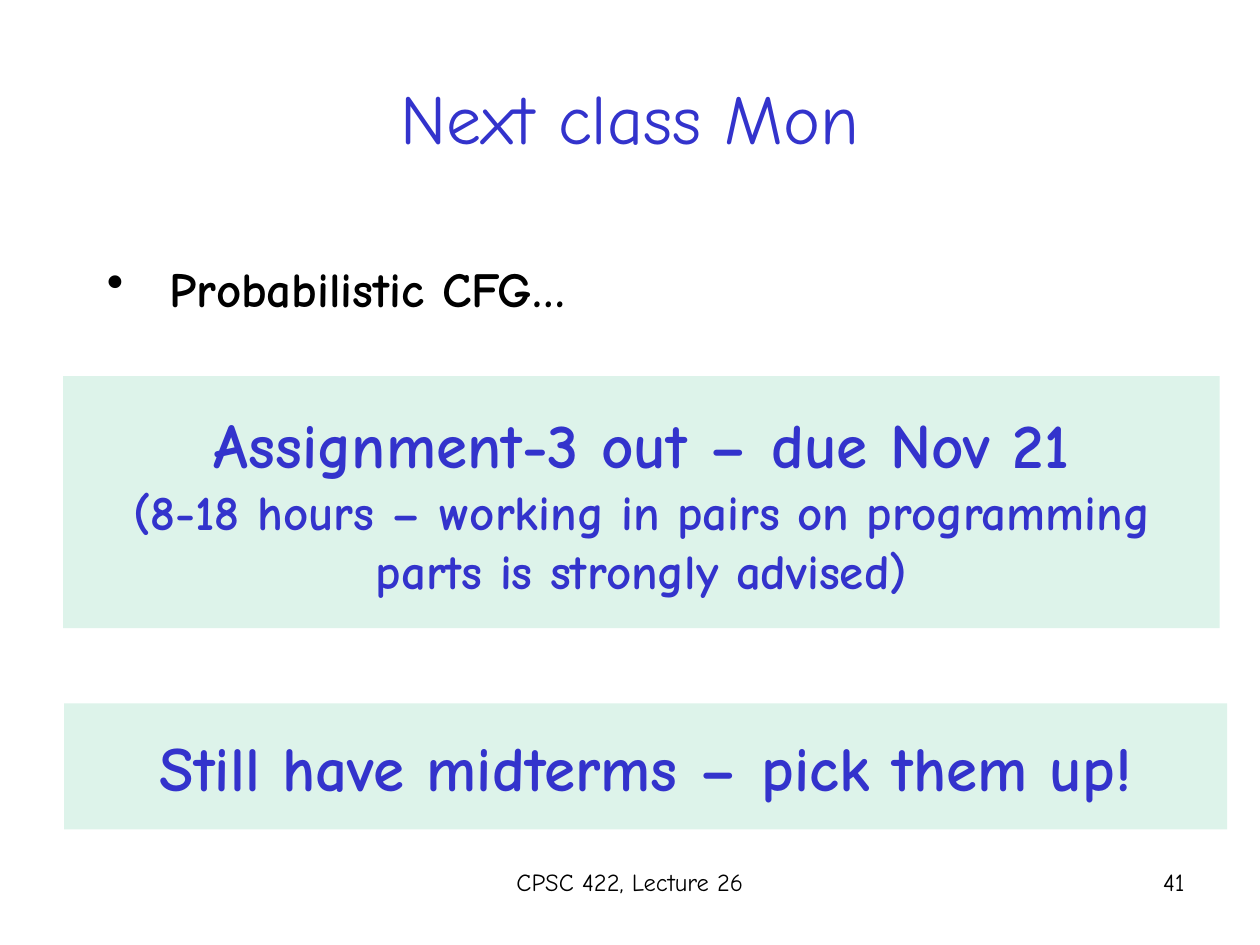
from lxml import etree
from pptx import Presentation
from pptx.dml.color import RGBColor
from pptx.enum import shapes, text
from pptx.oxml import ns
from pptx.util import Pt

FACE = "Comic Neue"
BLUE = RGBColor(0x33, 0x33, 0xCC)
BLACK = RGBColor(0, 0, 0)
MINT = RGBColor(0xDD, 0xF3, 0xEA)
MID = text.PP_ALIGN.CENTER
RIGHT = text.PP_ALIGN.RIGHT
TOP = text.MSO_ANCHOR.TOP
CORE = text.MSO_ANCHOR.MIDDLE


def write(shape, lines, color, bold=False, align=None, anchor=TOP):
    frame = shape.text_frame
    frame.word_wrap = True
    frame.vertical_anchor = anchor
    frame.text = "\n".join(line for line, size in lines)
    for para, (line, size) in zip(frame.paragraphs, lines):
        para.alignment = align
        font = para.font
        font.name = FACE
        font.size = Pt(size)
        font.bold = bold
        font.color.rgb = color
    return frame


def add_text(slide, box, *args, **style):
    shape = slide.shapes.add_textbox(*map(Pt, box))
    return write(shape, *args, **style)


def add_title(slide, box):
    add_text(slide, box, [("Next class Mon", 40)], BLUE, align=MID, anchor=CORE)


def add_topic(slide, box):
    frame = add_text(slide, box, [("Probabilistic CFG…", 28)], BLACK, bold=True)
    para = frame.paragraphs[0]
    para.space_before = Pt(5.6)
    props = para._p.get_or_add_pPr()
    props.set("marL", str(Pt(36)))
    props.set("indent", str(Pt(-36)))
    mark = etree.Element(ns.qn("a:buChar"), char="•")
    props.find(ns.qn("a:defRPr")).addprevious(mark)


def add_panel(slide, box, lines):
    panel = slide.shapes.add_shape(shapes.MSO_SHAPE.RECTANGLE, *map(Pt, box))
    panel.shadow.inherit = False
    panel.fill.solid()
    panel.fill.fore_color.rgb = MINT
    panel.line.fill.background()
    write(panel, lines, BLUE, bold=True, align=MID, anchor=CORE)


def add_footer(slide, box):
    left, top, width, height = box
    add_text(slide, (left, top, 228, height),
             [("CPSC 422, Lecture 26", 14)], BLACK, align=MID)
    add_text(slide, (left + width - 168, top, 168, height),
             [("41", 14)], BLACK, align=RIGHT)


def main():
    deck = Presentation()
    deck.slide_width, deck.slide_height = Pt(720), Pt(540)
    slide = deck.slides.add_slide(deck.slide_layouts[6])
    add_title(slide, (36, 21.6, 648, 90))
    add_topic(slide, (54, 144, 647, 72))
    add_footer(slide, (246, 492, 438, 37.5))
    add_panel(slide, (36, 215, 661, 144), [
        ("Assignment-3 out – due Nov 21", 36),
        ("(8-18 hours – working in pairs on programming "
         "parts is strongly advised)", 28),
    ])
    add_panel(slide, (36.75, 402, 664.5, 72), [
        ("Still have midterms – pick them up!", 36),
    ])
    deck.save("out.pptx")


if __name__ == "__main__":
    main()
